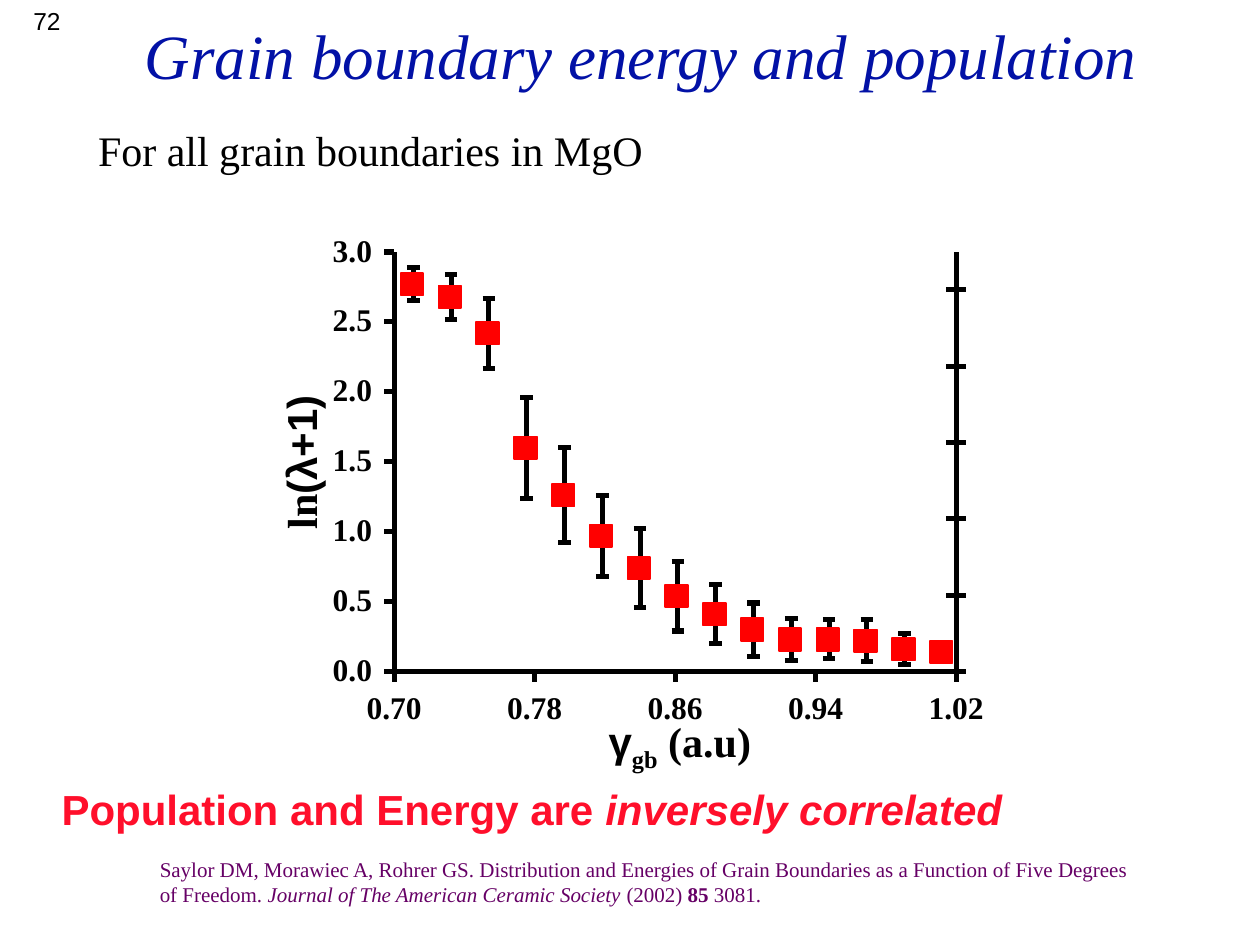
import pptx
import pptx.dml.color
import pptx.enum.shapes
import pptx.enum.text
import pptx.oxml.ns
import pptx.util
from lxml import etree

RGB = pptx.dml.color.RGBColor
BLACK = RGB(0x00, 0x00, 0x00)
TITLE_BLUE = RGB(0x02, 0x11, 0xA6)
FINDING_RED = RGB(0xFF, 0x0F, 0x2B)
MARKER_RED = RGB(0xFF, 0x00, 0x00)
CITATION_PURPLE = RGB(0x66, 0x00, 0x66)
SERIF, SANS = "Times New Roman", "Arial"
ALIGN = pptx.enum.text.PP_ALIGN
Inches = pptx.util.Inches

prs = pptx.Presentation()
prs.slide_width, prs.slide_height = Inches(10), Inches(7.5)
slide = prs.slides.add_slide(prs.slide_layouts[5])
plot = slide.shapes.add_group_shape()

# Plot area: edges, and the length of one unit of ln(λ+1)
LEFT, RIGHT, TOP, BASE = 3.13, 7.59, 2.0, 5.33
UNIT = (BASE - TOP) / 3
TICK = 0.08


def draw_line(x1, y1, x2, y2):
    line = plot.shapes.add_connector(
        pptx.enum.shapes.MSO_CONNECTOR.STRAIGHT,
        Inches(x1), Inches(y1), Inches(x2), Inches(y2))
    line.line.color.rgb = BLACK
    line.line.width = pptx.util.Pt(2.88)
    etree.SubElement(line._element.spPr, pptx.oxml.ns.qn("a:effectLst"))


def write(box, place, runs, size, color=BLACK, align=ALIGN.LEFT, wrap=True, inset=True):
    """Fill a box with runs of (text, font, bold, italic, baseline)."""
    box.left, box.top, box.width, box.height = (Inches(v) for v in place)
    frame = box.text_frame
    frame.word_wrap = wrap
    frame.auto_size = pptx.enum.text.MSO_AUTO_SIZE.NONE
    frame.vertical_anchor = pptx.enum.text.MSO_ANCHOR.TOP
    if not inset:
        frame.margin_left = frame.margin_right = 0
        frame.margin_top = frame.margin_bottom = 0
    paragraph = frame.paragraphs[0]
    paragraph.alignment = align
    for text, font, bold, italic, baseline in runs:
        run = paragraph.add_run()
        run.text = text
        run.font.name, run.font.size = font, pptx.util.Pt(size)
        run.font.bold, run.font.italic = bold, italic
        run.font.color.rgb = color
        if baseline:
            run._r.get_or_add_rPr().set("baseline", str(baseline * 1000))


# Headings
write(slide.shapes.title, (0.58, 0.08, 9.01, 0.7),
      [("Grain boundary energy and population", SERIF, False, True, 0)],
      36, TITLE_BLUE, ALIGN.CENTER)
page_number = slide.shapes.add_textbox(0, 0, 0, 0)
write(page_number, (0, 0, 0.58, 0.33), [("72", SANS, False, False, 0)], 14, align=ALIGN.RIGHT)
material = slide.shapes.add_textbox(0, 0, 0, 0)
write(material, (0.68, 0.94, 4.52, 0.5),
      [("For all grain boundaries in MgO", SERIF, False, False, 0)], 24, wrap=False)

# Axes
draw_line(LEFT, TOP, LEFT, BASE)
draw_line(LEFT, BASE, RIGHT, BASE)
draw_line(RIGHT, TOP, RIGHT, BASE)

# Ticks and labels of the vertical axis
for step in range(7):
    y = BASE - step * UNIT / 2
    draw_line(LEFT - TICK, y, LEFT, y)
    write(plot.shapes.add_textbox(0, 0, 0, 0), (2.64, y - 0.17, 0.31, 0.3),
          [(f"{step / 2:.1f}", SERIF, True, False, 0)], 18, wrap=False, inset=False)

# Ticks and labels of the horizontal axis
for step in range(5):
    x = LEFT + step * (RIGHT - LEFT) / 4
    draw_line(x, BASE + TICK, x, BASE)
    write(plot.shapes.add_textbox(0, 0, 0, 0), (x - 0.22, 5.46, 0.44, 0.3),
          [(f"{0.70 + step * 0.08:.2f}", SERIF, True, False, 0)], 18, wrap=False, inset=False)

# Ticks of the right-hand axis
for step in range(6):
    y = BASE - step * (BASE - 2.3) / 5
    draw_line(RIGHT - TICK, y, RIGHT + TICK, y)

# Measurements: ln(λ+1) and its error, at equal steps of energy
measurements = [
    (2.77, 0.12), (2.68, 0.16), (2.42, 0.25), (1.60, 0.36), (1.26, 0.34),
    (0.97, 0.29), (0.74, 0.28), (0.54, 0.25), (0.41, 0.21), (0.30, 0.19),
    (0.23, 0.15), (0.23, 0.14), (0.22, 0.15), (0.16, 0.11), (0.14, 0.07)]
FIRST, SPACING, CAP, MARKER = 3.28, 0.3, 0.1, 0.18
points = [(FIRST + i * SPACING, BASE - value * UNIT, error * UNIT)
          for i, (value, error) in enumerate(measurements)]

for x, y, error in points:
    # The last point has a lower error bar only
    for end in (y + error,) if x > 7.4 else (y - error, y + error):
        draw_line(x, y, x, end)
        draw_line(x - CAP / 2, end, x + CAP / 2, end)

for x, y, error in points:
    marker = plot.shapes.add_shape(
        pptx.enum.shapes.MSO_SHAPE.RECTANGLE,
        Inches(x - 0.1), Inches(y - MARKER / 2), Inches(MARKER), Inches(MARKER))
    marker.shadow.inherit = False
    marker.fill.solid()
    marker.fill.fore_color.rgb = MARKER_RED
    marker.line.color.rgb = MARKER_RED
    marker.line.width = pptx.util.Pt(1)

# Axis titles
energy_title = plot.shapes.add_textbox(0, 0, 0, 0)
write(energy_title, (4.6, 5.63, 1.59, 0.5),
      [("γ", SANS, True, False, 0), ("gb", SERIF, True, False, -25),
       (" (a.u)", SERIF, True, False, 0)], 24, align=ALIGN.CENTER)
population_title = plot.shapes.add_textbox(0, 0, 0, 0)
write(population_title, (1.59, 3.42, 1.59, 0.5),
      [("ln", SERIF, True, False, 0), ("(λ+1)", SANS, True, False, 0)],
      24, align=ALIGN.CENTER)
population_title.rotation = 270

# Finding and citation
finding = slide.shapes.add_textbox(0, 0, 0, 0)
write(finding, (0.39, 6.17, 8.92, 0.5),
      [("Population and Energy are ", SANS, True, False, 0),
       ("inversely correlated", SANS, True, True, 0)], 24, FINDING_RED)
citation = slide.shapes.add_textbox(0, 0, 0, 0)
write(citation, (1.17, 6.75, 8, 0.43),
      [("Saylor DM, Morawiec A, Rohrer GS. Distribution and Energies of Grain Boundaries "
        "as a Function of Five Degrees of Freedom. ", SERIF, False, False, 0),
       ("Journal of The American Ceramic Society ", SERIF, False, True, 0),
       ("(2002) ", SERIF, False, False, 0),
       ("85", SERIF, True, False, 0),
       (" 3081.", SERIF, False, False, 0)], 12, CITATION_PURPLE)

prs.save("out.pptx")
